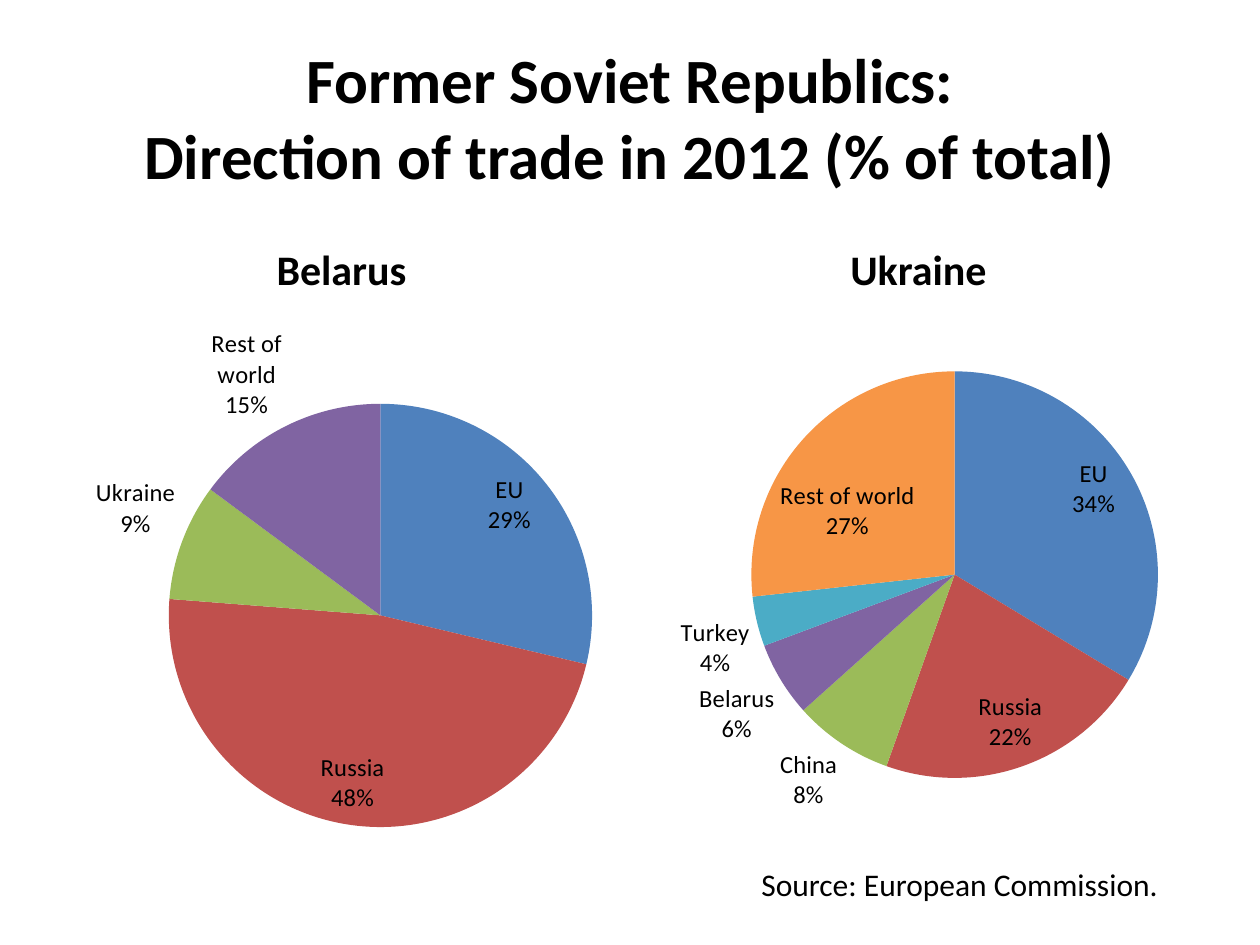
from lxml import etree
from pptx import Presentation
from pptx import util as u
from pptx.chart.data import CategoryChartData
from pptx.dml.color import RGBColor
from pptx.enum import chart as ch, text
from pptx.oxml import ns

PX = 914400 / 126
FONT = "Calibri"
COLOURS = {
    "text": "000000",
    "EU": "4F81BD",
    "Russia": "C0504D",
    "third": "9BBB59",
    "fourth": "8064A2",
    "Turkey": "4BACC6",
    "last": "F79646",
}
BELARUS = {"EU": (29, "EU"), "Russia": (48, "Russia"),
           "Ukraine": (9, "third"), "Rest of world": (15, "fourth")}
UKRAINE = {"EU": (34, "EU"), "Russia": (22, "Russia"),
           "China": (8, "third"), "Belarus": (6, "fourth"),
           "Turkey": (4, "Turkey"), "Rest of world": (27, "last")}


def px(*lengths):
    return [u.Emu(round(n * PX)) for n in lengths]


def rgb(name):
    return RGBColor.from_string(COLOURS[name])


def format_font(font, size, bold=False):
    for key, value in {"name": FONT, "size": u.Pt(size), "bold": bold}.items():
        setattr(font, key, value)
    font.color.rgb = rgb("text")


def place(sp, box):
    for key, value in zip(("left", "top", "width", "height"), px(*box)):
        setattr(sp, key, value)


def fill_text(sp, words, size, bold, align, anchor):
    tf = sp.text_frame
    tf.vertical_anchor = anchor
    p = tf.paragraphs[0]
    p.text = words
    p.alignment = align
    p.space_before = u.Pt(0)
    for r in p.runs:
        format_font(r.font, size, bold)


def add_heading(sp, words, size, box, anchor):
    place(sp, box)
    fill_text(sp, words, size, True, text.PP_ALIGN.CENTER, anchor)


def add_source(s, words, box):
    sp = s.shapes.add_textbox(*px(*box))
    fill_text(sp, words, 18, False, text.PP_ALIGN.LEFT, text.MSO_ANCHOR.TOP)
    sp.text_frame.word_wrap = False
    sp.text_frame.auto_size = text.MSO_AUTO_SIZE.SHAPE_TO_FIT_TEXT


def set_plot_layout(chart, fractions):
    """Fix the inner plot area, given as x, y, w, h fractions of the chart."""
    area = chart.plots[0]._element.getparent()
    for old in area.findall(ns.qn("c:layout")):
        area.remove(old)
    layout = etree.Element(ns.qn("c:layout"))
    manual = etree.SubElement(layout, ns.qn("c:manualLayout"))
    values = {"layoutTarget": "inner", "xMode": "edge", "yMode": "edge"}
    values.update(zip("xywh", fractions))
    for tag, value in values.items():
        etree.SubElement(manual, ns.qn(f"c:{tag}"), val=str(value))
    area.insert(0, layout)


def add_labels(plot):
    plot.has_data_labels = True
    labels = plot.data_labels
    for key, value in {"show_category_name": True, "show_percentage": True,
                       "show_value": False,
                       "position": ch.XL_LABEL_POSITION.BEST_FIT}.items():
        setattr(labels, key, value)
    format_font(labels.font, 14)
    separator = etree.Element(ns.qn("c:separator"))
    separator.text = "\n"
    labels._element.find(ns.qn("c:showBubbleSize")).addnext(separator)


def add_pie(s, slices, box, fractions):
    data = CategoryChartData()
    data.categories = list(slices)
    data.add_series("Series 1", [value for value, _ in slices.values()])
    chart = s.shapes.add_chart(ch.XL_CHART_TYPE.PIE, *px(*box), data).chart
    chart.has_title = chart.has_legend = False
    format_font(chart.font, 10)
    plot = chart.plots[0]
    plot.vary_by_categories = True
    for i, (_, colour) in enumerate(slices.values()):
        fill = plot.series[0].points[i].format.fill
        fill.solid()
        fill.fore_color.rgb = rgb(colour)
    add_labels(plot)
    set_plot_layout(chart, fractions)


def main():
    prs = Presentation()
    prs.slide_width, prs.slide_height = px(1260, 945)
    s = prs.slides.add_slide(prs.slide_layouts.get_by_name("Comparison"))
    title, left_head, left_body, right_head, right_body = s.placeholders
    for empty in (left_body, right_body):
        empty._element.getparent().remove(empty._element)

    add_heading(title, "Former Soviet Republics:\vDirection of trade in 2012 (% of total)",
                36, (63, 38, 1134, 157), text.MSO_ANCHOR.MIDDLE)
    columns = ((left_head, "Belarus", 63, BELARUS, (0.19, 0.19, 0.76, 0.78)),
               (right_head, "Ukraine", 640, UKRAINE, (0.2, 0.13, 0.73, 0.75)))
    for head, country, x, slices, fractions in columns:
        add_heading(head, country, 24, (x, 212, 557, 88), text.MSO_ANCHOR.BOTTOM)
        add_pie(s, slices, (x, 300, 557, 544), fractions)
    add_source(s, "Source: European Commission.", (749, 859, 431, 51))
    prs.save("out.pptx")


if __name__ == "__main__":
    main()
